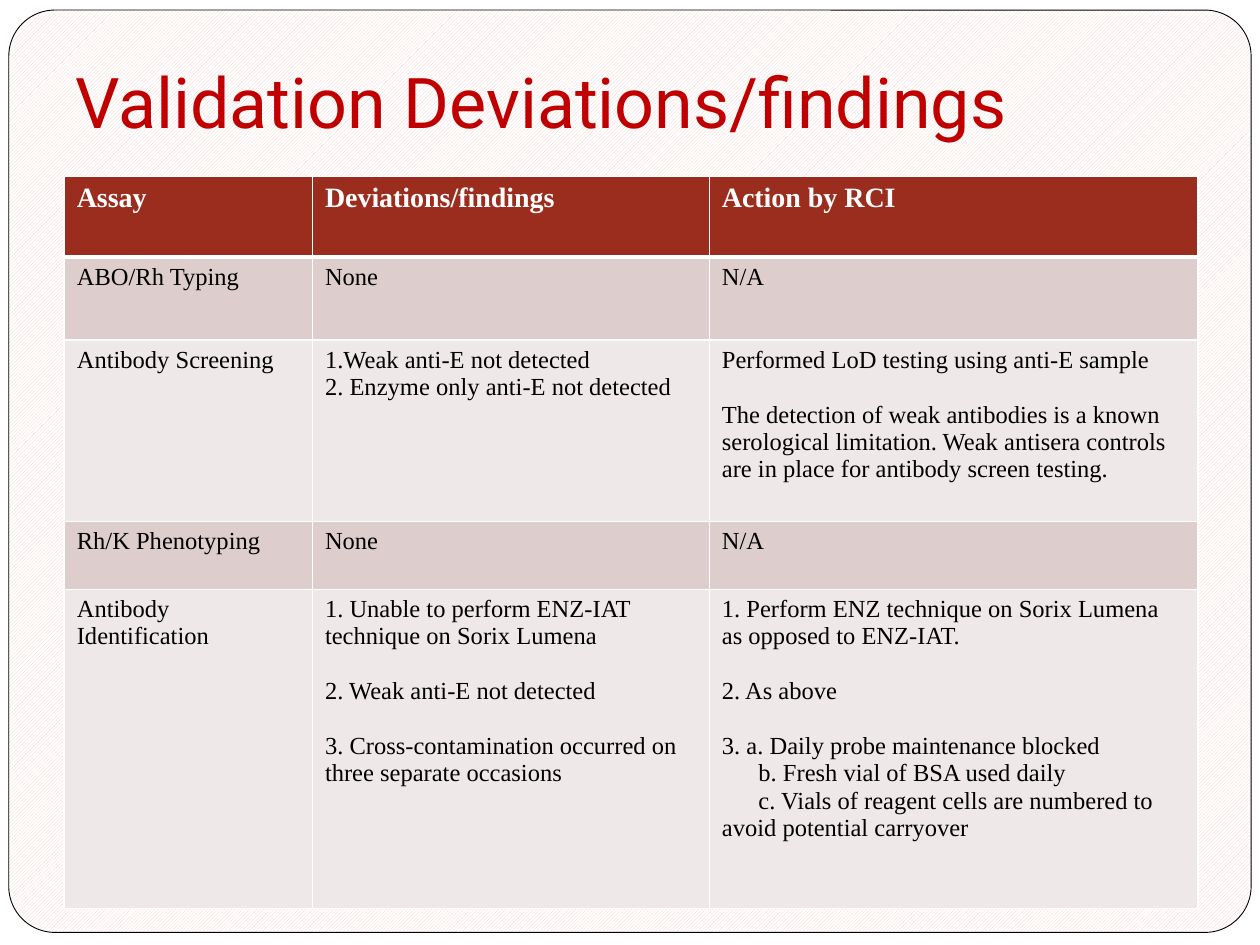
"""Build the validation deviations slide with its findings table."""
from lxml.etree import SubElement
from pptx import Presentation
from pptx.dml.color import RGBColor
from pptx.enum.dml import MSO_PATTERN
from pptx.enum.shapes import MSO_SHAPE
from pptx.enum.text import MSO_ANCHOR, MSO_AUTO_SIZE, PP_ALIGN
from pptx.oxml.ns import qn
from pptx.util import Inches, Pt

THEME = {
    "white": RGBColor.from_string("FFFFFF"),
    "black": RGBColor.from_string("000000"),
    "hatch": RGBColor.from_string("F4CEC9"),
    "title": RGBColor.from_string("C00000"),
    "header": RGBColor.from_string("9B2D1F"),
    "bands": [RGBColor.from_string("EFE8E8"), RGBColor.from_string("DECDCD")],
    "title_font": "Roboto",
    "table_font": "Times New Roman",
    "title_size": Pt(40),
    "header_size": Pt(16),
    "body_size": Pt(14),
    "item_gap": Pt(16),
    "sub_item_indent": Inches(0.29),
}
COLUMN_WIDTHS = [1.97, 3.15, 3.88]
ROW_HEIGHTS = [0.64, 0.66, 1.44, 0.54, 2.53]
PLAIN, SPACED, INDENTED = "plain", "spaced", "indented"
ROWS = [
    [[("Assay", PLAIN)], [("Deviations/findings", PLAIN)], [("Action by RCI", PLAIN)]],
    [[("ABO/Rh Typing", PLAIN)], [("None", PLAIN)], [("N/A", PLAIN)]],
    [
        [("Antibody Screening", PLAIN)],
        [("1.Weak anti-E not detected", PLAIN), ("2. Enzyme only anti-E not detected", PLAIN)],
        [
            ("Performed LoD testing using anti-E sample", PLAIN),
            ("The detection of weak antibodies is a known serological limitation. "
             "Weak antisera controls are in place for antibody screen testing.", SPACED),
        ],
    ],
    [[("Rh/K Phenotyping", PLAIN)], [("None", PLAIN)], [("N/A", PLAIN)]],
    [
        [("Antibody Identification", PLAIN)],
        [
            ("1. Unable to perform ENZ-IAT technique on Sorix Lumena", PLAIN),
            ("2. Weak anti-E not detected", SPACED),
            ("3. Cross-contamination occurred on three separate occasions", SPACED),
        ],
        [
            ("1. Perform ENZ technique on Sorix Lumena as opposed to ENZ-IAT.", PLAIN),
            ("2. As above", SPACED),
            ("3. a. Daily probe maintenance blocked", SPACED),
            ("b. Fresh vial of BSA used daily", INDENTED),
            ("c. Vials of reagent cells are numbered to avoid potential carryover", INDENTED),
        ],
    ],
]


def format_font(font, **values):
    font.color.rgb = values.pop("color")
    for name, value in values.items():
        setattr(font, name, value)


def add_borders(cell, bottom_width):
    properties = cell._tc.get_or_add_tcPr()
    widths = {"a:lnL": Pt(1), "a:lnR": Pt(1), "a:lnT": Pt(1), "a:lnB": bottom_width}
    for tag, width in widths.items():
        line = SubElement(properties, qn(tag), w=str(width))
        fill = SubElement(line, qn("a:solidFill"))
        SubElement(fill, qn("a:srgbClr"), val=str(THEME["white"]))


presentation = Presentation()
presentation.slide_width = Inches(10)
presentation.slide_height = Inches(7.5)
slide = presentation.slides.add_slide(presentation.slide_layouts[5])
slide.background.fill.solid()
slide.background.fill.fore_color.rgb = THEME["white"]

frame = slide.shapes.add_shape(
    MSO_SHAPE.ROUNDED_RECTANGLE, Inches(0.07), Inches(0.08), Inches(9.86), Inches(7.32)
)
frame.adjustments[0] = 0.05
frame.shadow.inherit = False
frame.fill.patterned()
frame.fill.pattern = MSO_PATTERN.LIGHT_UPWARD_DIAGONAL
frame.fill.fore_color.rgb = THEME["hatch"]
frame.fill.back_color.rgb = THEME["white"]
frame.line.color.rgb = THEME["black"]
frame.line.width = Pt(0.5)

title = slide.shapes.title
title._element.addprevious(frame._element)
title_box = {"left": 0.5, "top": 0.3, "width": 9, "height": 0.93}
for name, value in title_box.items():
    setattr(title, name, Inches(value))
title_format = {
    "text": "Validation Deviations/findings",
    "vertical_anchor": MSO_ANCHOR.BOTTOM,
    "auto_size": MSO_AUTO_SIZE.NONE,
    "word_wrap": True,
    "margin_left": Inches(0.1),
    "margin_top": Inches(0.05),
    "margin_right": Inches(0.1),
    "margin_bottom": Inches(0.1),
}
for name, value in title_format.items():
    setattr(title.text_frame, name, value)
paragraph = title.text_frame.paragraphs[0]
paragraph.alignment = PP_ALIGN.LEFT
format_font(paragraph.runs[0].font, name=THEME["title_font"], size=THEME["title_size"],
            color=THEME["title"])

table = slide.shapes.add_table(
    len(ROWS), len(COLUMN_WIDTHS), Inches(0.51), Inches(1.4),
    Inches(sum(COLUMN_WIDTHS)), Inches(sum(ROW_HEIGHTS))
).table
for column, width in zip(table.columns, COLUMN_WIDTHS):
    column.width = Inches(width)
for row, height in zip(table.rows, ROW_HEIGHTS):
    row.height = Inches(height)

for row_index, row_content in enumerate(ROWS):
    is_header = row_index == 0
    row_fill = THEME["header"] if is_header else THEME["bands"][row_index % 2]
    font_format = {
        "name": THEME["table_font"],
        "size": THEME["header_size"] if is_header else THEME["body_size"],
        "bold": is_header,
        "color": THEME["white"] if is_header else THEME["black"],
    }
    for column_index, items in enumerate(row_content):
        cell = table.cell(row_index, column_index)
        add_borders(cell, Pt(3) if is_header else Pt(1))
        cell.fill.solid()
        cell.fill.fore_color.rgb = row_fill
        cell.text = "\n".join(text for text, layout in items)
        for paragraph, (text, layout) in zip(cell.text_frame.paragraphs, items):
            format_font(paragraph.runs[0].font, **font_format)
            if layout == SPACED:
                paragraph.space_before = THEME["item_gap"]
            if layout == INDENTED:
                paragraph_properties = paragraph._p.get_or_add_pPr()
                paragraph_properties.set("marL", "0")
                paragraph_properties.set("indent", str(THEME["sub_item_indent"]))

presentation.save("out.pptx")
